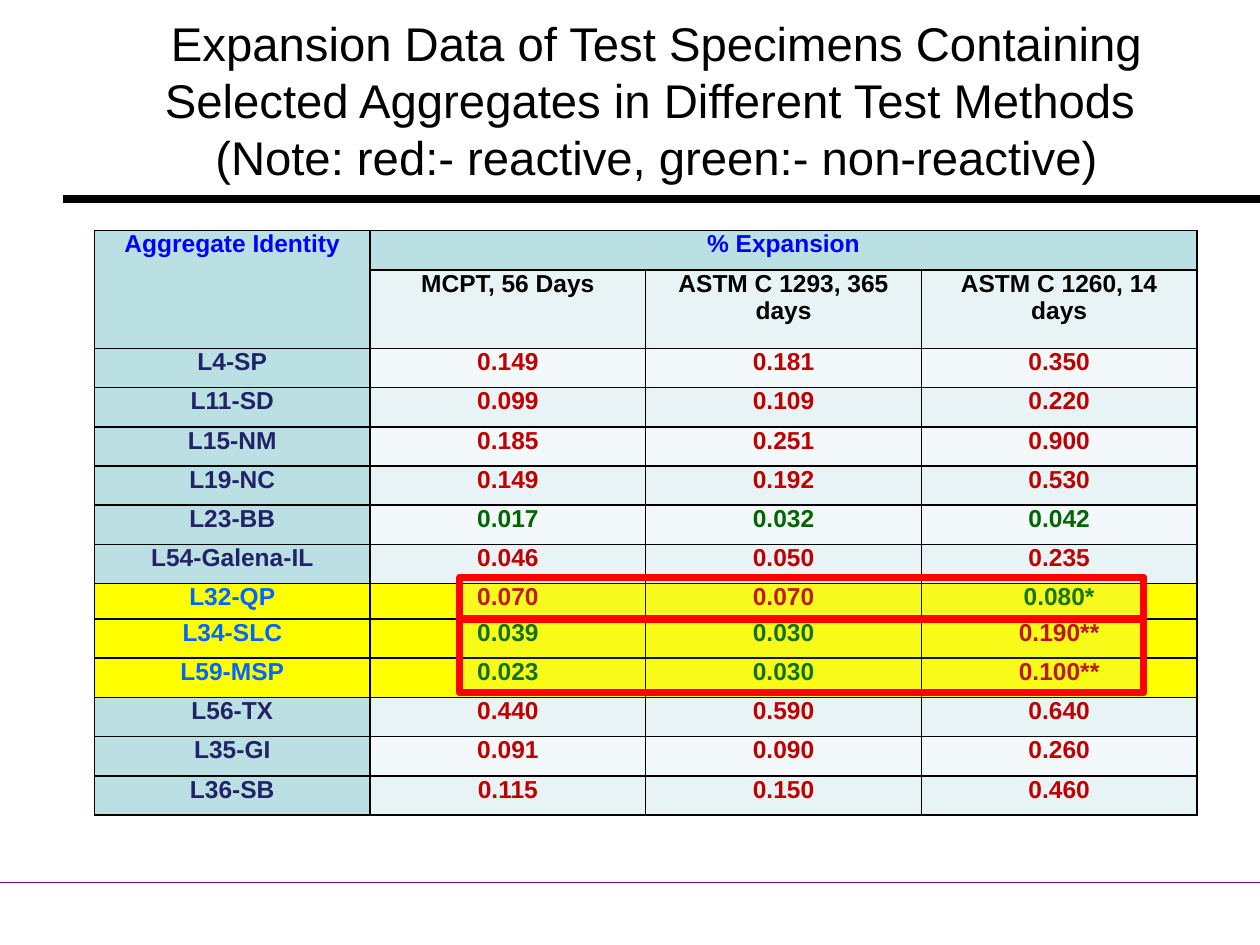
from pptx import Presentation
from pptx.dml.color import RGBColor as RGB
from pptx.enum.shapes import MSO_CONNECTOR as Conn, MSO_SHAPE as Form
from pptx.enum.text import MSO_ANCHOR as Anchor, PP_ALIGN as Align
from pptx.oxml import parse_xml
from pptx.oxml.ns import nsdecls, qn
from pptx.util import Inches, Pt
from lxml.etree import SubElement

BLACK = RGB(0, 0, 0)
PURPLE = RGB(0x80, 0, 0x80)
BLUE = RGB(0, 0, 0xFF)
NAVY = RGB(0x22, 0x22, 0x67)
SKY = RGB(0, 0x66, 0xFF)
CRIMSON = RGB(0xC0, 0, 0)
GREEN = RGB(0, 0x66, 0)
RED = RGB(0xFF, 0, 0)
YELLOW = RGB(0xFF, 0xFF, 0)
TEAL = RGB(0xBB, 0xE0, 0xE3)
PALE = RGB(0xE7, 0xF3, 0xF4)
LIGHT = RGB(0xF3, 0xF9, 0xFA)

TITLE = ("Expansion Data of Test Specimens Containing Selected Aggregates "
         "in Different Test Methods \v(Note: red:- reactive, green:- non-reactive)")
TESTS = ["MCPT, 56 Days", "ASTM C 1293, 365 days", "ASTM C 1260, 14 days"]
LIMITS = [0.04, 0.04, 0.1]
DATA = [
    ("L4-SP", "0.149", "0.181", "0.350"),
    ("L11-SD", "0.099", "0.109", "0.220"),
    ("L15-NM", "0.185", "0.251", "0.900"),
    ("L19-NC", "0.149", "0.192", "0.530"),
    ("L23-BB", "0.017", "0.032", "0.042"),
    ("L54-Galena-IL", "0.046", "0.050", "0.235"),
    ("L32-QP", "0.070", "0.070", "0.080*"),
    ("L34-SLC", "0.039", "0.030", "0.190**"),
    ("L59-MSP", "0.023", "0.030", "0.100**"),
    ("L56-TX", "0.440", "0.590", "0.640"),
    ("L35-GI", "0.091", "0.090", "0.260"),
    ("L36-SB", "0.115", "0.150", "0.460"),
]
MARKED = {"L32-QP", "L34-SLC", "L59-MSP"}


class Deck:
    font = "Arial"

    def __init__(self):
        self.prs = Presentation()
        self.prs.slide_width, self.prs.slide_height = Inches(10), Inches(7.5)
        self.slide = self.prs.slides.add_slide(self.prs.slide_layouts[6])
        self.shapes = self.slide.shapes

    def label(self, frame, text, size, color, bold=False):
        frame.text = text
        para = frame.paragraphs[0]
        para.alignment = Align.CENTER
        for run in para.runs:
            font = run.font
            font.name, font.size, font.bold = self.font, Pt(size), bold
            font.color.rgb = color

    def title(self, text, *box):
        frame = self.shapes.add_textbox(*map(Inches, box)).text_frame
        frame.word_wrap = True
        frame.vertical_anchor = Anchor.MIDDLE
        self.label(frame, text, 27, BLACK)

    def rule(self, left, top, right, color, width):
        line = self.shapes.add_connector(
            Conn.STRAIGHT, *map(Inches, (left, top, right, top)))
        line.line.color.rgb = color
        line.line.width = Pt(width)
        SubElement(line._element.spPr, qn("a:effectLst"))

    def frame(self, alpha, *box):
        rect = self.shapes.add_shape(Form.RECTANGLE, *map(Inches, box))
        rect.shadow.inherit = False
        rect.fill.solid()
        rect.fill.fore_color.rgb = TEAL
        tint = rect._element.spPr.find(qn("a:solidFill"))[0]
        SubElement(tint, qn("a:alpha"), val=str(alpha * 1000))
        rect.line.color.rgb = RED
        rect.line.width = Pt(4)

    def grid(self, heights, cols, *box):
        table = self.shapes.add_table(
            len(heights), cols, *map(Inches, box)).table
        for row, high in zip(table.rows, heights):
            row.height = Inches(high)
        return table

    def cell(self, cell, text, color, fill):
        cell.margin_left = cell.margin_right = Inches(0.07)
        cell.margin_top = cell.margin_bottom = 0
        props = cell._tc.get_or_add_tcPr()
        for side in "LRTB":
            props.append(parse_xml(
                f'<a:ln{side} {nsdecls("a")} w="12700"><a:solidFill>'
                f'<a:srgbClr val="{BLACK}"/></a:solidFill></a:ln{side}>'))
        cell.fill.solid()
        cell.fill.fore_color.rgb = fill
        self.label(cell.text_frame, text, 14, color, True)


def fill_table(deck):
    high, short = 4.64, 0.28
    unit = (high - short) / 14
    heights = [unit] * 14
    heights[1], heights[8] = 2 * unit, short
    table = deck.grid(heights, 4, 0.75, 1.83, 8.75, high)
    heads = ["Aggregate Identity", "% Expansion", "", ""]
    for col, text in enumerate(heads):
        deck.cell(table.cell(0, col), text, BLUE, TEAL)
    deck.cell(table.cell(1, 0), "", BLUE, TEAL)
    for col, text in enumerate(TESTS, 1):
        deck.cell(table.cell(1, col), text, BLACK, PALE)
    table.cell(0, 0).merge(table.cell(1, 0))
    table.cell(0, 1).merge(table.cell(0, 3))
    for row, (name, *vals) in enumerate(DATA, 2):
        mark = name in MARKED
        band = PALE if row % 2 else LIGHT
        deck.cell(table.cell(row, 0), name,
                  SKY if mark else NAVY, YELLOW if mark else TEAL)
        for col, (val, limit) in enumerate(zip(vals, LIMITS), 1):
            color = CRIMSON if float(val.rstrip("*")) >= limit else GREEN
            deck.cell(table.cell(row, col), val, color,
                      YELLOW if mark else band)


def main():
    deck = Deck()
    deck.rule(0.5, 1.58, 10, BLACK, 4.5)
    deck.rule(0, 7, 10, PURPLE, 0.25)
    deck.title(TITLE, 0.5, 0.08, 9.42, 1.42)
    fill_table(deck)
    deck.frame(13, 3.65, 4.58, 5.43, 0.33)
    deck.frame(10, 3.65, 4.92, 5.43, 0.58)
    deck.prs.save("out.pptx")


if __name__ == "__main__":
    main()
